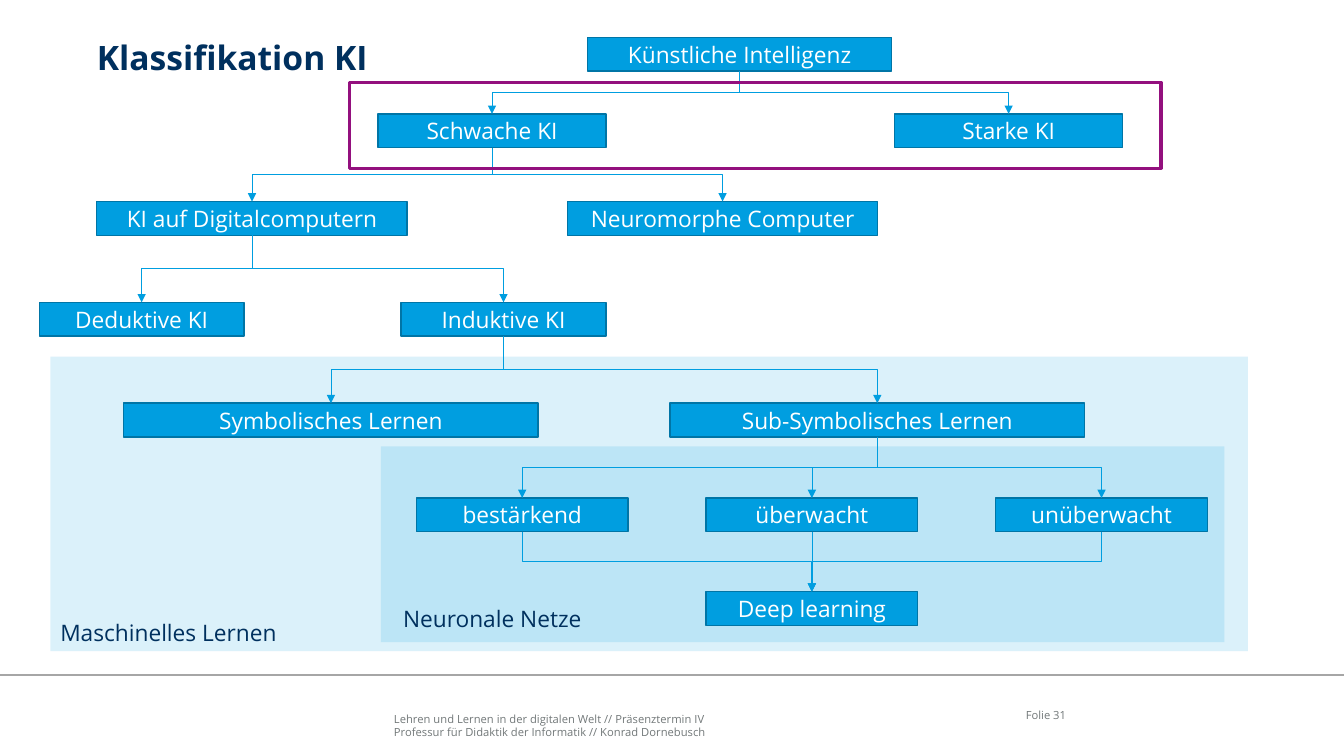
from lxml.etree import SubElement
from pptx import Presentation
from pptx.dml.color import RGBColor
from pptx.enum.dml import MSO_LINE
from pptx.enum.shapes import MSO_CONNECTOR, MSO_SHAPE
from pptx.enum.text import MSO_ANCHOR, MSO_AUTO_SIZE, PP_ALIGN
from pptx.oxml.ns import qn
from pptx.util import Cm, Pt

NAVY = RGBColor(0x00, 0x30, 0x5E)
BLUE = RGBColor(0x00, 0x9E, 0xE0)
EDGE = RGBColor(0x00, 0x75, 0xA6)
PLUM = RGBColor(0x93, 0x10, 0x7E)
GREY = RGBColor(0x72, 0x78, 0x79)
RULE = RGBColor(0xA6, 0xA6, 0xA6)
WHITE = RGBColor(0xFF, 0xFF, 0xFF)

WIDE, TALL = 33.87, 19.05
BOX_H = 0.85
TITLE = "Klassifikation KI"
FOOTER = [
    "Lehren und Lernen in der digitalen Welt // Präsenztermin IV",
    "Professur für Didaktik der Informatik // Konrad Dornebusch",
]
NUMBER = "Folie 31"

# top, box width, (label, centre)
ROWS = [
    (0.94, 7.67, [("Künstliche Intelligenz", 18.64)]),
    (2.87, 5.74, [("Schwache KI", 12.4), ("Starke KI", 25.42)]),
    (5.08, 7.82, [("KI auf Digitalcomputern", 6.35), ("Neuromorphe Computer", 18.21)]),
    (7.62, 5.16, [("Deduktive KI", 3.57), ("Induktive KI", 12.69)]),
    (10.16, 10.44, [("Symbolisches Lernen", 8.34), ("Sub-Symbolisches Lernen", 22.11)]),
    (12.55, 5.33, [("bestärkend", 13.16), ("überwacht", 20.46), ("unüberwacht", 27.76)]),
    (14.91, 5.33, [("Deep learning", 20.46)]),
]
LINKS = [
    ("Künstliche Intelligenz", ["Starke KI", "Schwache KI"]),
    ("Schwache KI", ["Neuromorphe Computer", "KI auf Digitalcomputern"]),
    ("KI auf Digitalcomputern", ["Deduktive KI", "Induktive KI"]),
    ("Induktive KI", ["Symbolisches Lernen", "Sub-Symbolisches Lernen"]),
    ("Sub-Symbolisches Lernen", ["bestärkend", "überwacht", "unüberwacht"]),
    ("bestärkend", ["Deep learning"]),
    ("überwacht", ["Deep learning"]),
    ("unüberwacht", ["Deep learning"]),
]
ZONES = [(1.27, 8.99, 30.18, 7.42), (9.6, 11.25, 21.26, 4.93)]
NOTES = [
    ("Maschinelles Lernen", (1.27, 15.47, 7.21, 0.94)),
    ("Neuronale Netze", (9.91, 15.11, 7.21, 0.94)),
]
FRAME = (8.81, 2.08, 20.45, 2.16)


def write(shape, text, size=16.2, color=NAVY, bold=False, align=PP_ALIGN.LEFT,
          anchor=MSO_ANCHOR.TOP, inset=None):
    frame = shape.text_frame
    frame.text = text
    frame.word_wrap = True
    frame.auto_size = MSO_AUTO_SIZE.NONE
    frame.vertical_anchor = anchor
    if inset is not None:
        frame.margin_left = frame.margin_right = Cm(inset)
        frame.margin_top = frame.margin_bottom = Cm(inset)
    for para in frame.paragraphs:
        para.alignment = align
        para.font.name = "Open Sans"
        para.font.size = Pt(size)
        para.font.bold = bold
        para.font.color.rgb = color


def place(area):
    return [Cm(part) for part in area]


def rect(area, fill=None, line=None, width=1, alpha=None):
    shape = shapes.add_shape(MSO_SHAPE.RECTANGLE, *place(area))
    shape.shadow.inherit = False
    if fill is None:
        shape.fill.background()
    else:
        shape.fill.solid()
        shape.fill.fore_color.rgb = fill
    if alpha is not None:
        tint = shape.element.spPr.find(".//" + qn("a:srgbClr"))
        SubElement(tint, qn("a:alpha"), val=str(alpha * 1000))
    if line is None:
        shape.line.fill.background()
    else:
        shape.line.color.rgb = line
        shape.line.width = Pt(width)
    return shape


def stroke(kind, ends, color, width):
    line = shapes.add_connector(kind, *ends)
    line.line.color.rgb = color
    line.line.width = Pt(width)
    line.line.dash_style = MSO_LINE.SOLID
    SubElement(line.element.spPr, qn("a:effectLst"))
    return line


def link(start, end):
    x1, y1 = start.left + start.width // 2, start.top + start.height
    x2, y2 = end.left + end.width // 2, end.top
    bent = x1 != x2
    kind = MSO_CONNECTOR.ELBOW if bent else MSO_CONNECTOR.STRAIGHT
    line = stroke(kind, (x1, y1, x2, y2), BLUE, 0.5)
    line.begin_connect(start, 2)
    line.end_connect(end, 0)
    if bent:
        drop, span = y2 - y1, abs(x2 - x1)
        line.left, line.top = (x1 + x2 - drop) // 2, (y1 + y2 - span) // 2
        line.width, line.height = drop, span
        form = line.element.spPr.find(qn("a:xfrm"))
        form.rot = 270 if x2 > x1 else 90
        form.flipH, form.flipV = x2 > x1, False
    SubElement(line.element.spPr.find(qn("a:ln")), qn("a:tailEnd"), type="triangle")


deck = Presentation()
deck.slide_width, deck.slide_height = Cm(WIDE), Cm(TALL)
slide = deck.slides.add_slide(deck.slide_layouts[5])
shapes = slide.shapes

title = shapes.title
title.left, title.top, title.width, title.height = place((2.44, 0.92, 29.39, 1.9))
write(title, TITLE, size=24, bold=True, inset=0)

stroke(MSO_CONNECTOR.STRAIGHT, place((0, 17.01, WIDE, 17.01)), RULE, 1)
foot = shapes.add_textbox(*place((9.93, 17.86, 14.4, 0.76)))
write(foot, "\n".join(FOOTER), size=8, color=GREY, anchor=MSO_ANCHOR.BOTTOM, inset=0)
page = shapes.add_textbox(*place((24.92, 17.84, 1.95, 0.4)))
write(page, NUMBER, size=8, color=GREY, align=PP_ALIGN.RIGHT, inset=0)

for zone in ZONES:
    rect(zone, fill=BLUE, alpha=14)

nodes = {}
for top, width, items in ROWS:
    for label, mid in items:
        box = rect((mid - width / 2, top, width, BOX_H), fill=BLUE, line=EDGE)
        write(box, label, color=WHITE, align=PP_ALIGN.CENTER, anchor=MSO_ANCHOR.MIDDLE)
        nodes[label] = box

for start, ends in LINKS:
    for end in ends:
        link(nodes[start], nodes[end])

for label, area in NOTES:
    write(shapes.add_textbox(*place(area)), label)

rect(FRAME, line=PLUM, width=2.25)

deck.save("out.pptx")
